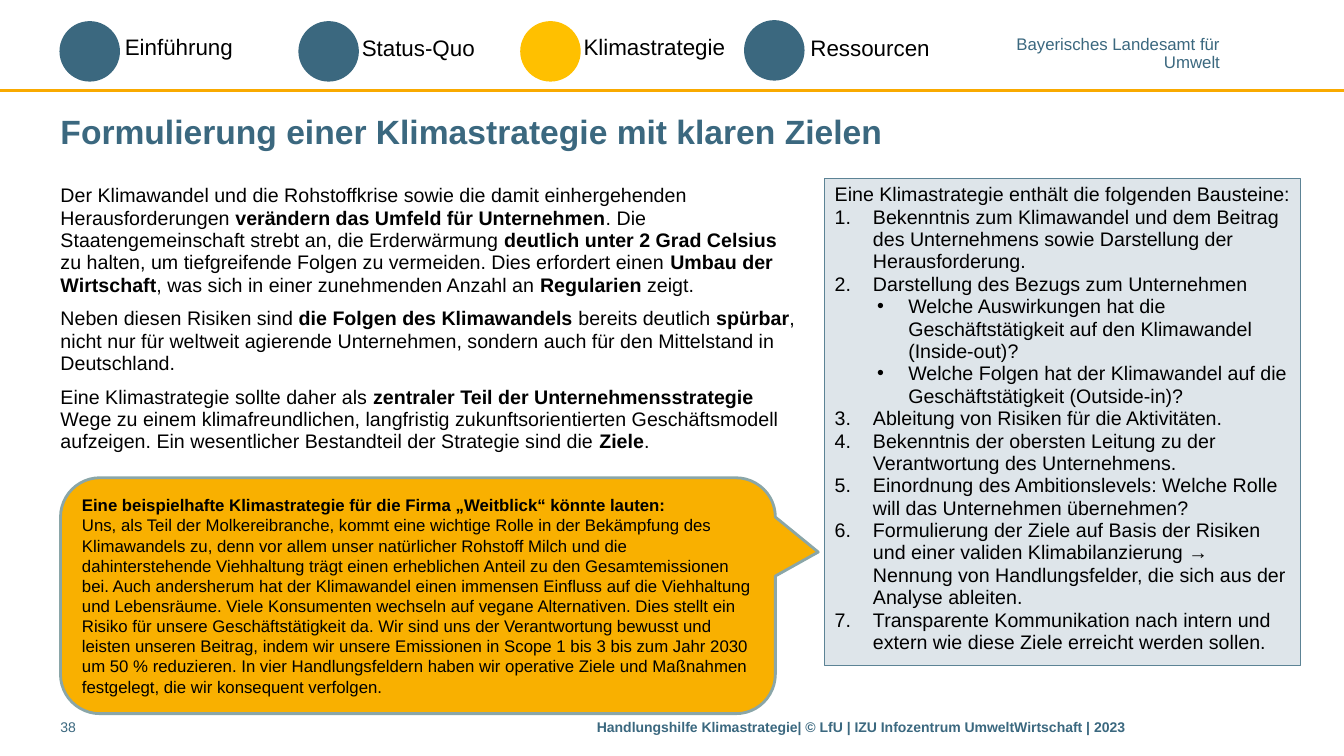
from lxml.etree import SubElement
from pptx import Presentation
from pptx.dml.color import RGBColor
from pptx.enum.shapes import MSO_CONNECTOR as Connector, MSO_SHAPE as Shape
from pptx.enum.text import MSO_ANCHOR as Anchor, PP_ALIGN as Align
from pptx.oxml.ns import qn
from pptx.util import Inches, Pt

BLUE = "3B687F"
BLACK = "000000"
YELLOW = "FFC000"

CHAPTERS = [  # circle left, circle top, label left, label top, label
    (0.59, 0.21, 1.14, 0.28, "Einführung"),
    (2.96, 0.21, 3.49, 0.29, "Status-Quo"),
    (5.16, 0.21, 5.69, 0.28, "Klimastrategie"),
    (7.38, 0.2, 7.94, 0.29, "Ressourcen"),
]
CURRENT_CHAPTER = "Klimastrategie"

# Text between double asterisks is bold.
INTRODUCTION = [
    "Der Klimawandel und die Rohstoffkrise sowie die damit einhergehenden "
    "Herausforderungen **verändern das Umfeld für Unternehmen**. Die "
    "Staatengemeinschaft strebt an, die Erderwärmung **deutlich unter 2 Grad Celsius "
    "**zu halten, um tiefgreifende Folgen zu vermeiden. Dies erfordert einen **Umbau der "
    "Wirtschaft**, was sich in einer zunehmenden Anzahl an **Regularien** zeigt.",
    "Neben diesen Risiken sind **die Folgen des Klimawandels **bereits deutlich "
    "**spürbar**, nicht nur für weltweit agierende Unternehmen, sondern auch für den "
    "Mittelstand in Deutschland.",
    "Eine Klimastrategie sollte daher als **zentraler Teil der Unternehmensstrategie "
    "**Wege zu einem klimafreundlichen, langfristig zukunftsorientierten Geschäftsmodell "
    "aufzeigen. Ein wesentlicher Bestandteil der Strategie sind die **Ziele**.",
]

BUILDING_BLOCKS = [  # list level (0 plain, 1 numbered, 2 bulleted), text
    (0, "Eine Klimastrategie enthält die folgenden Bausteine:"),
    (1, "Bekenntnis zum Klimawandel und dem Beitrag des Unternehmens sowie "
        "Darstellung der Herausforderung."),
    (1, "Darstellung des Bezugs zum Unternehmen"),
    (2, "Welche Auswirkungen hat die Geschäftstätigkeit auf den Klimawandel (Inside-out)?"),
    (2, "Welche Folgen hat der Klimawandel auf die Geschäftstätigkeit (Outside-in)?"),
    (1, "Ableitung von Risiken für die Aktivitäten."),
    (1, "Bekenntnis der obersten Leitung zu der Verantwortung des Unternehmens."),
    (1, "Einordnung des Ambitionslevels: Welche Rolle will das Unternehmen übernehmen?"),
    (1, "Formulierung der Ziele auf Basis der Risiken und einer validen Klimabilanzierung → "
        "Nennung von Handlungsfelder, die sich aus der Analyse ableiten."),
    (1, "Transparente Kommunikation nach intern und extern wie diese Ziele erreicht "
        "werden sollen."),
]

EXAMPLE = [
    "**Eine beispielhafte Klimastrategie für die Firma „Weitblick“ könnte lauten:**",
    "Uns, als Teil der Molkereibranche, kommt eine wichtige Rolle in der Bekämpfung des "
    "Klimawandels zu, denn vor allem unser natürlicher Rohstoff Milch und die "
    "dahinterstehende Viehhaltung trägt einen erheblichen Anteil zu den Gesamtemissionen "
    "bei. Auch andersherum hat der Klimawandel einen immensen Einfluss auf die Viehhaltung "
    "und Lebensräume. Viele Konsumenten wechseln auf vegane Alternativen. Dies stellt ein "
    "Risiko für unsere Geschäftstätigkeit da. Wir sind uns der Verantwortung bewusst und "
    "leisten unseren Beitrag, indem wir unsere Emissionen in Scope 1 bis 3 bis zum Jahr 2030 "
    "um 50 % reduzieren. In vier Handlungsfeldern haben wir operative Ziele und Maßnahmen "
    "festgelegt, die wir konsequent verfolgen.",
]


def color(hex_code):
    return RGBColor.from_string(hex_code)


def set_list_level(para, level):
    """Number the paragraph at level 1, give it a bullet at level 2."""
    if level == 0:
        return
    margin, indent = ((0.38, -0.38), (0.73, -0.31))[level - 1]
    para.level = level - 1
    properties = para._p.get_or_add_pPr()
    properties.set("marL", str(Inches(margin)))
    properties.set("indent", str(Inches(indent)))
    SubElement(properties, qn("a:buFont"), typeface="Arial")
    if level == 1:
        SubElement(properties, qn("a:buAutoNum"), type="arabicPeriod")
    else:
        SubElement(properties, qn("a:buChar"), char="•")


def write(shape, texts, size, hex_code=BLACK, align=Align.LEFT, line_spacing=None,
          space_before=0, levels=None, anchor=Anchor.TOP):
    """Fill the shape with one paragraph per text, bold between double asterisks."""
    frame = shape.text_frame
    frame.word_wrap = True
    frame.vertical_anchor = anchor
    for index, text in enumerate(texts):
        para = frame.add_paragraph() if index else frame.paragraphs[0]
        if levels:
            set_list_level(para, levels[index])
        para.alignment = align
        para.line_spacing = line_spacing
        if index and space_before:
            para.space_before = Pt(space_before)
        for part, words in enumerate(text.split("**")):
            if not words:
                continue
            span = para.add_run()
            span.text = words
            span.font.name = "Arial"
            span.font.size = Pt(size)
            span.font.bold = part % 2 == 1
            span.font.color.rgb = color(hex_code)


def add_text(page, left, top, width, height, texts, size, side_inset=0, **style):
    box = page.shapes.add_textbox(*map(Inches, (left, top, width, height)))
    box.text_frame.margin_left = box.text_frame.margin_right = Inches(side_inset)
    write(box, texts, size, **style)
    return box


def add_filled(page, kind, left, top, width, height, fill, line=None, line_width=1):
    shape = page.shapes.add_shape(kind, *map(Inches, (left, top, width, height)))
    shape.shadow.inherit = False
    shape.fill.solid()
    shape.fill.fore_color.rgb = color(fill)
    if line:
        shape.line.color.rgb = color(line)
        shape.line.width = Pt(line_width)
    else:
        shape.line.fill.background()
    return shape


def add_header(page):
    rule = page.shapes.add_connector(Connector.STRAIGHT, 0, Inches(0.9),
                                     Inches(13.33), Inches(0.9))
    rule.line.color.rgb = color("F9AA00")
    rule.line.width = Pt(2)
    SubElement(rule._element.spPr, qn("a:effectLst"))
    office = add_text(page, 9.6, 0.37, 2.5, 0.34, ["Bayerisches Landesamt für", "Umwelt"],
                      12, hex_code=BLUE, align=Align.RIGHT, line_spacing=0.85)
    office.text_frame.margin_top = office.text_frame.margin_bottom = 0
    for circle_left, circle_top, left, top, label in CHAPTERS:
        fill = YELLOW if label == CURRENT_CHAPTER else BLUE
        add_filled(page, Shape.OVAL, circle_left, circle_top, 0.6, 0.6, fill)
        add_text(page, left, top, 1.7, 0.37, [label], 16, side_inset=0.1)


def add_building_blocks(page):
    panel = add_filled(page, Shape.RECTANGLE, 8.18, 1.77, 4.72, 4.83, "DEE5EA", "5C8395")
    levels, texts = zip(*BUILDING_BLOCKS)
    write(panel, texts, 14, line_spacing=Pt(16), levels=levels)


def add_example(page):
    callout = add_filled(page, Shape.ROUNDED_RECTANGULAR_CALLOUT, 0.6, 4.74, 7.09, 2.34,
                         "F9B000", "8AA6A8", 2)
    for index, value in enumerate((0.56, -0.185, 0.167)):
        callout.adjustments[index] = value
    write(callout, EXAMPLE, 12, anchor=Anchor.MIDDLE)


def main():
    deck = Presentation()
    deck.slide_width, deck.slide_height = Inches(13.33), Inches(7.5)
    page = deck.slides.add_slide(deck.slide_layouts[6])
    add_header(page)
    add_text(page, 0.6, 1.02, 12.31, 0.55,
             ["**Formulierung einer Klimastrategie mit klaren Zielen**"], 24,
             hex_code=BLUE, anchor=Anchor.MIDDLE)
    add_text(page, 0.6, 1.78, 7.32, 3, INTRODUCTION, 14,
             line_spacing=Pt(16), space_before=8)
    add_building_blocks(page)
    add_example(page)
    add_text(page, 0.6, 7.08, 0.7, 0.31, ["38"], 10, hex_code=BLUE)
    add_text(page, 5.92, 7.08, 6.99, 0.31,
             ["**Handlungshilfe Klimastrategie| © LfU | IZU Infozentrum "
              "UmweltWirtschaft | 2023**"], 10, hex_code=BLUE)
    deck.save("out.pptx")


if __name__ == "__main__":
    main()
